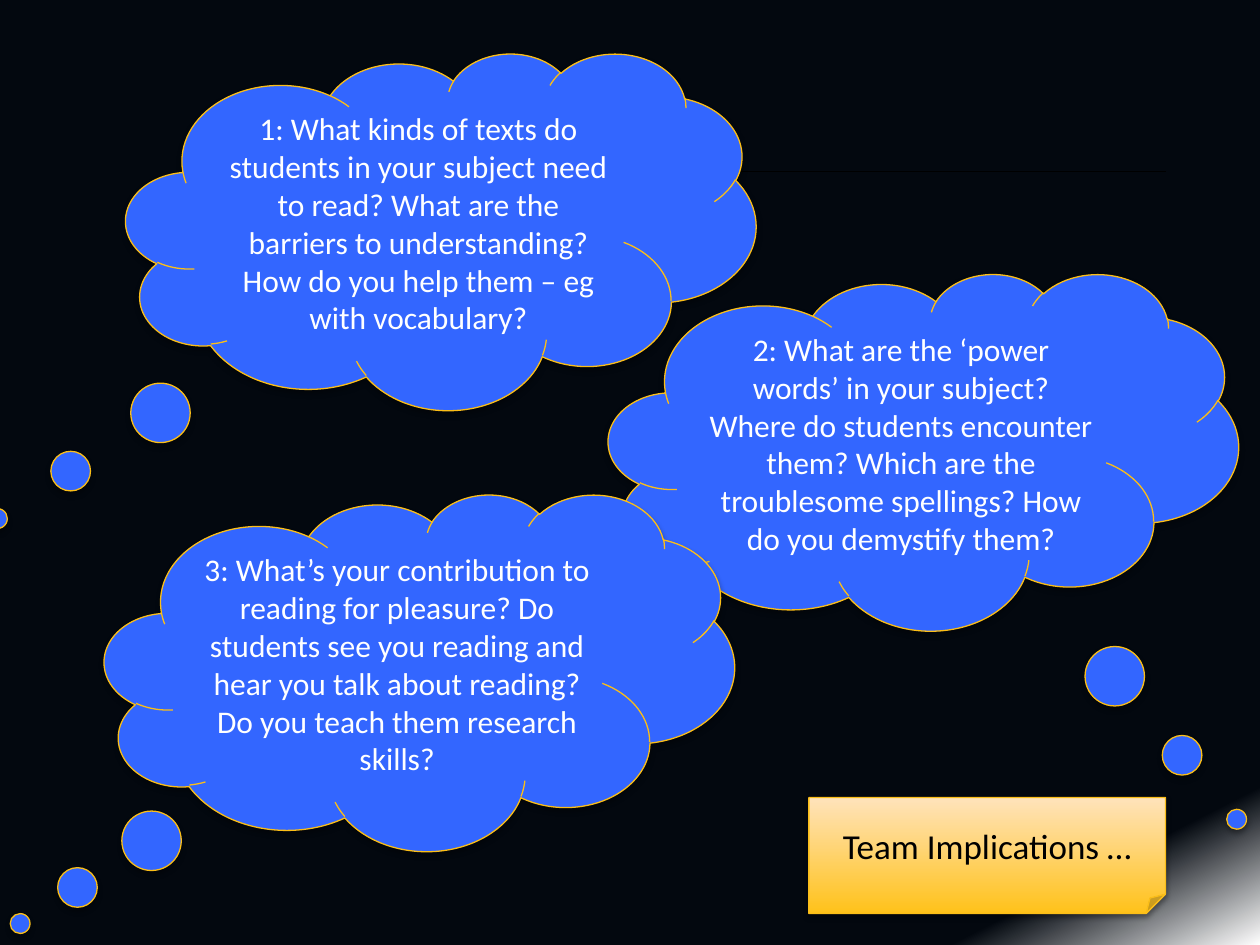
from lxml.etree import SubElement as Sub
from pptx import Presentation
from pptx.dml.color import RGBColor
from pptx.enum.shapes import MSO_CONNECTOR as Conn, MSO_SHAPE as Kind
from pptx.enum.text import MSO_ANCHOR as Anchor, PP_ALIGN as Align
from pptx.oxml.ns import qn
from pptx.util import Inches, Pt

CLOUDS = [
    (1, 0.42, (-0.704, 0.806),
     "1: What kinds of texts do students in your subject need to read? "
     "What are the barriers to understanding? "
     "How do you help them – eg with vocabulary?"),
    (4.83, 2.17, (0.497, 1.031),
     "2: What are the ‘power words’ in your subject? "
     "Where do students encounter them? "
     "Which are the troublesome spellings? How do you demystify them?"),
    (0.83, 3.92, (-0.634, 0.705),
     "3: What’s your contribution to reading for pleasure? "
     "Do students see you reading and hear you talk about reading? "
     "Do you teach them research skills?"),
]
NOTE = "Team Implications …"
NIGHT = [(0, "03080F"), (90, "03080F"), (100, "FFFFFF")]
AMBER = [(0, "FFC21A"), (100, "FFE3BB")]
BLUE, GOLD, WHITE, BLACK = "3366FF", "FBBE18", "FFFFFF", "000000"


def color(code):
    return RGBColor.from_string(code)


def blend(fill, root, stops, angle):
    fill.gradient()
    fill.gradient_angle = 360 - angle
    ramp = root.find(".//" + qn("a:gsLst"))
    for stop in list(ramp):
        ramp.remove(stop)
    for place, code in stops:
        stop = Sub(ramp, qn("a:gs"), pos=str(place * 1000))
        Sub(stop, qn("a:srgbClr"), val=code)


def shade(shape):
    shape.shadow.inherit = False
    glow = Sub(shape.element.spPr.find(qn("a:effectLst")), qn("a:outerShdw"),
               blurRad=str(Pt(3.1)), dist=str(Pt(1.8)), dir="5400000",
               rotWithShape="0")
    tint = Sub(glow, qn("a:srgbClr"), val=BLACK)
    Sub(tint, qn("a:alpha"), val="35000")


def bubble(slide, kind, box, text, size, ink):
    shape = slide.shapes.add_shape(kind, *map(Inches, box))
    shape.line.color.rgb = color(GOLD)
    shape.line.width = Pt(0.75)
    shade(shape)
    frame = shape.text_frame
    frame.word_wrap = True
    frame.vertical_anchor = Anchor.MIDDLE
    para = frame.paragraphs[0]
    para.text = text
    para.alignment = Align.CENTER
    para.font.name = "Calibri"
    para.font.size = Pt(size)
    para.font.color.rgb = color(ink)
    return shape


def main():
    deck = Presentation()
    deck.slide_width, deck.slide_height = Inches(10), Inches(7.5)
    slide = deck.slides.add_slide(deck.slide_layouts[6])
    blend(slide.background.fill, slide.element, NIGHT, 63)

    rule = slide.shapes.add_connector(
        Conn.STRAIGHT, *map(Inches, (1.83, 1.36, 9.25, 1.36)))
    rule.line.color.rgb = color(BLACK)
    rule.line.width = Pt(0.75)
    Sub(rule.element.spPr, qn("a:effectLst"))

    for left, top, tail, text in CLOUDS:
        cloud = bubble(slide, Kind.CLOUD_CALLOUT, (left, top, 5, 2.83),
                       text, 18, WHITE)
        cloud.fill.solid()
        cloud.fill.fore_color.rgb = color(BLUE)
        cloud.adjustments[0], cloud.adjustments[1] = tail

    note = bubble(slide, Kind.FOLDED_CORNER, (6.42, 6.33, 2.83, 0.92),
                  NOTE, 20, BLACK)
    blend(note.fill, note.element, AMBER, 270)
    deck.save("out.pptx")


if __name__ == "__main__":
    main()
